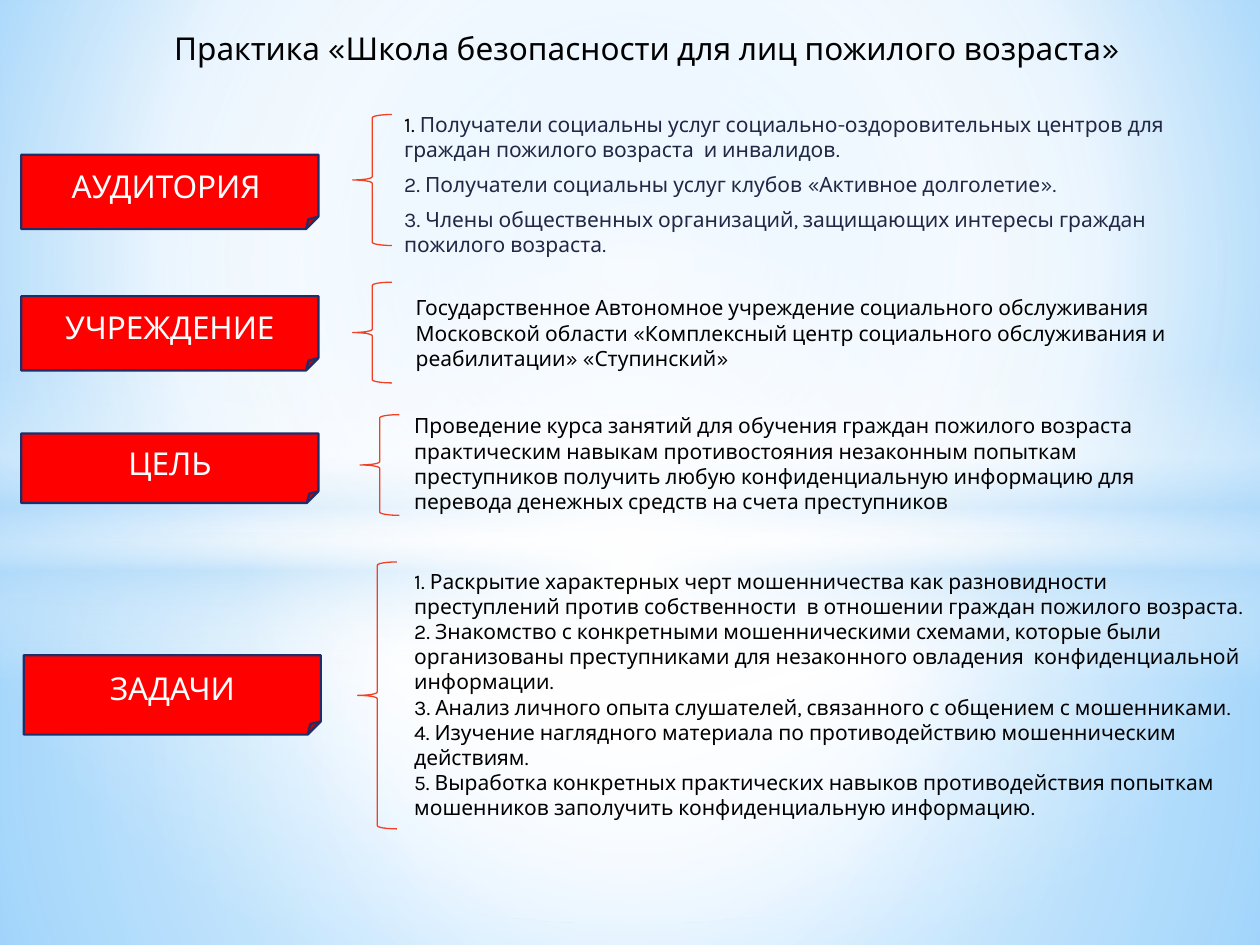
"""Builds the slide about the safety school for older people."""
from lxml.etree import SubElement
from pptx import Presentation
from pptx.dml.color import RGBColor
from pptx.enum.shapes import MSO_SHAPE
from pptx.enum.text import MSO_ANCHOR, PP_ALIGN
from pptx.oxml.ns import qn
from pptx.util import Cm, Pt

WHITE = RGBColor(0xFF, 0xFF, 0xFF)
BLACK = RGBColor(0, 0, 0)
RED = RGBColor(0xFF, 0, 0)
NAVY = RGBColor(0x21, 0x27, 0x45)
EDGE = RGBColor(0x1F, 0x2E, 0x69)
CORAL = RGBColor(0xF1, 0x41, 0x24)
PALE = RGBColor(0xB4, 0xDC, 0xFA)
SKY = RGBColor(0x9E, 0xD5, 0xFF)
BLUE = RGBColor(0x5B, 0xB9, 0xFF)


def blend(part, stops, focus):
    """Turn the solid fill of a part into a gradient."""
    solid = part.find(".//" + qn("a:solidFill"))
    grad = solid.makeelement(qn("a:gradFill"), {"rotWithShape": "1"})
    items = SubElement(grad, qn("a:gsLst"))
    for pos, color, alpha in stops:
        stop = SubElement(items, qn("a:gs"), pos=str(pos * 1000))
        tint = SubElement(stop, qn("a:srgbClr"), val=str(color))
        if alpha < 100:
            SubElement(tint, qn("a:alpha"), val=str(alpha * 1000))
    if focus:
        way = SubElement(grad, qn("a:path"), path="circle")
        sides = {side: str(val * 1000) for side, val in zip("ltrb", focus)}
        SubElement(way, qn("a:fillToRect"), sides)
    else:
        SubElement(grad, qn("a:lin"), ang="5400000", scaled="0")
    solid.getparent().replace(solid, grad)


def write(shape, lines, size, ink, align=PP_ALIGN.LEFT, lead="", before=0, after=0):
    """Fill a shape with paragraphs; a lead is a black start of the first."""
    frame = shape.text_frame
    frame.word_wrap = True
    for num, line in enumerate(lines):
        para = frame.add_paragraph() if num else frame.paragraphs[0]
        form = {"alignment": align, "space_after": Pt(after),
                "space_before": Pt(before if num else 0)}
        for key, val in form.items():
            setattr(para, key, val)
        parts = [(line, ink)]
        if lead and not num:
            parts.insert(0, (lead, BLACK))
        for text, color in parts:
            run = para.add_run()
            run.text = text
            for key, val in {"name": "Karla", "size": Pt(size)}.items():
                setattr(run.font, key, val)
            run.font.color.rgb = color


deck = Presentation()
deck.slide_width, deck.slide_height = Cm(25.4), Cm(19.05)
slide = deck.slides.add_slide(deck.slide_layouts[6])
shapes = slide.shapes

back = slide.background.fill
back.solid()
blend(slide.element, [(0, SKY, 100), (60, WHITE, 100), (100, BLUE, 100)], (20, 10, 20, 60))

MID = (50, 50, 50, 50)
glows = [
    (MSO_SHAPE.RECTANGLE, 10.74, 8.31, MID,
     [(0, WHITE, 91), (37, WHITE, 76), (100, PALE, 79)]),
    (MSO_SHAPE.RECTANGLE, 0, 10.74, MID,
     [(0, WHITE, 89), (48, WHITE, 62), (100, PALE, 79)]),
    (MSO_SHAPE.RECTANGLE, 7.37, 6.35, None,
     [(0, WHITE, 0), (29, WHITE, 30), (45, PALE, 40),
      (55, WHITE, 26), (65, PALE, 60), (100, WHITE, 0)]),
    (MSO_SHAPE.OVAL, 4.45, 14.17, MID, [(0, WHITE, 100), (54, WHITE, 0)]),
]
for kind, top, high, focus, stops in glows:
    glow = shapes.add_shape(kind, 0, Cm(top), deck.slide_width, Cm(high))
    glow.shadow.inherit = False
    glow.line.fill.background()
    glow.fill.solid()
    blend(glow.element, stops, focus)

title = shapes.add_textbox(Cm(2.06), Cm(0.46), Cm(21.97), Cm(1.02))
write(title, ["Практика «Школа безопасности для лиц пожилого возраста»"], 18, BLACK, PP_ALIGN.CENTER)

rows = [
    ("АУДИТОРИЯ ", (0.43, 3.12, 1.5), (7.11, 2.31, 2.64), (7.9, 2.13, 17.2, 3.89),
     {"ink": NAVY, "lead": "1. ", "before": 2.4, "after": 3},
     ["Получатели социальны услуг социально-оздоровительных центров для граждан "
      "пожилого возраста  и инвалидов.",
      "2. Получатели социальны услуг клубов «Активное долголетие».",
      "3. Члены общественных организаций, защищающих интересы граждан пожилого возраста."]),
    ("УЧРЕЖДЕНИЕ", (0.43, 5.97, 1.5), (7.11, 5.69, 2.03), (8.13, 5.82, 15.9, 1.8),
     {"ink": BLACK},
     ["Государственное Автономное учреждение социального обслуживания  Московской области "
      "«Комплексный центр социального обслуживания и реабилитации» «Ступинский»"]),
    ("ЦЕЛЬ", (0.43, 8.74, 1.4), (7.26, 8.36, 2.03), (8.1, 8.2, 16, 2.31),
     {"ink": BLACK},
     ["Проведение курса занятий для обучения граждан пожилого возраста практическим навыкам "
      "противостояния незаконным попыткам преступников получить любую конфиденциальную "
      "информацию для перевода денежных средств на счета преступников"]),
    ("ЗАДАЧИ", (0.48, 13.21, 1.6), (7.21, 11.33, 5.38), (8.1, 11.33, 17.22, 5.38),
     {"ink": BLACK},
     ["1. Раскрытие характерных черт мошенничества как разновидности преступлений против "
      "собственности  в отношении граждан пожилого возраста.",
      "2. Знакомство с конкретными мошенническими схемами, которые были организованы "
      "преступниками для незаконного овладения  конфиденциальной информации.",
      "3. Анализ личного опыта слушателей, связанного с общением с мошенниками.",
      "4. Изучение наглядного материала по противодействию мошенническим действиям.",
      "5. Выработка конкретных практических навыков противодействия попыткам мошенников "
      "заполучить конфиденциальную информацию."]),
]
for name, spot, curl, area, look, lines in rows:
    left, top, high = spot
    card = shapes.add_shape(MSO_SHAPE.FOLDED_CORNER, Cm(left), Cm(top), Cm(5.99), Cm(high))
    card.fill.solid()
    card.fill.fore_color.rgb = RED
    card.text_frame.vertical_anchor = MSO_ANCHOR.MIDDLE
    write(card, [name], 18, WHITE, PP_ALIGN.CENTER)

    left, top, high = curl
    brace = shapes.add_shape(MSO_SHAPE.LEFT_BRACE, Cm(left), Cm(top), Cm(0.79), Cm(high))
    brace.fill.background()

    for shape, color, width in ((card, EDGE, 1.25), (brace, CORAL, 0.75)):
        shape.shadow.inherit = False
        shape.line.color.rgb = color
        shape.line.width = Pt(width)

    box = shapes.add_textbox(*[Cm(val) for val in area])
    write(box, lines, 12, **look)

deck.save("out.pptx")
